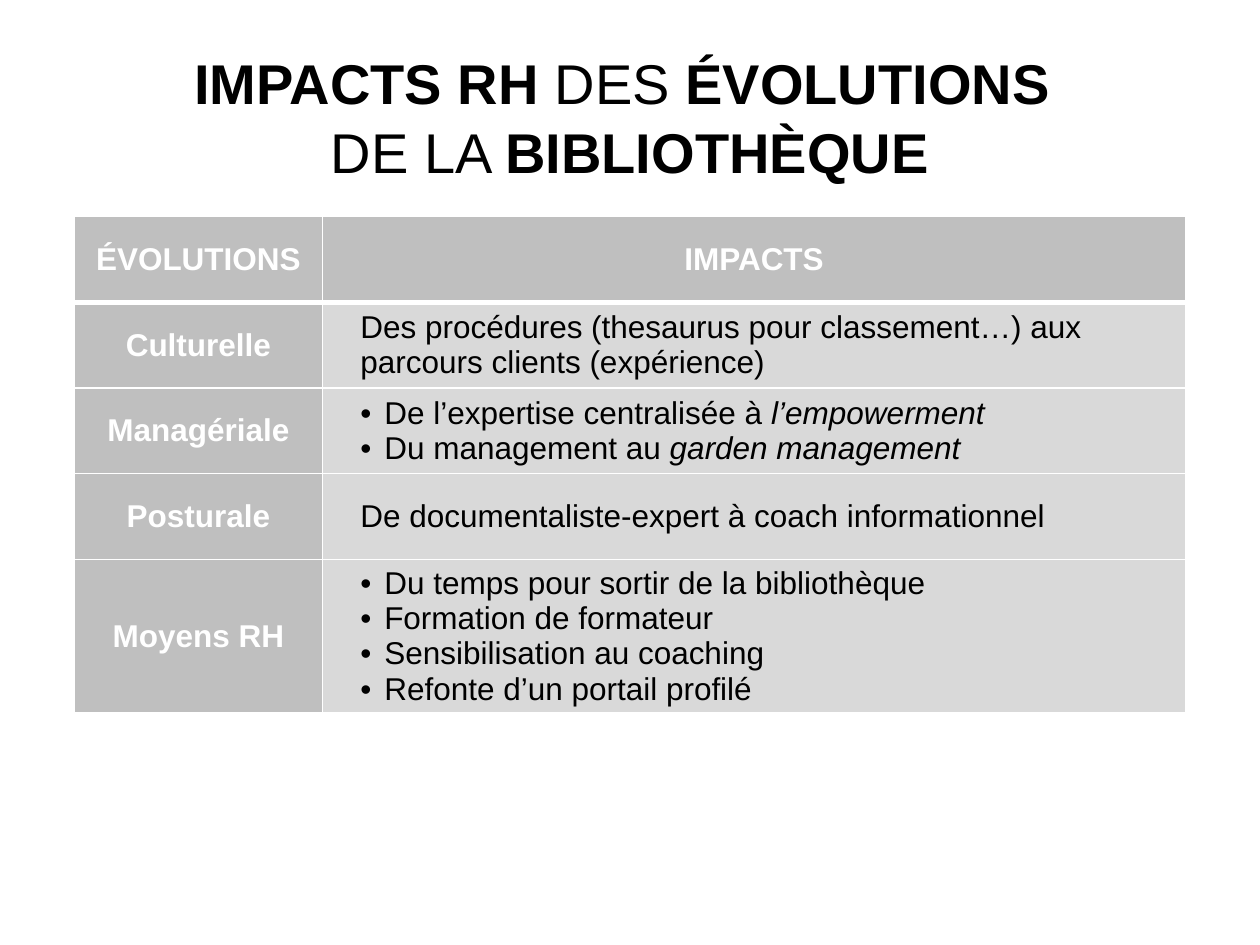
import pptx
import pptx.dml.color
import pptx.enum.text
import pptx.oxml
import pptx.oxml.ns
import pptx.util

Inches, Pt = pptx.util.Inches, pptx.util.Pt
ALIGN = pptx.enum.text.PP_ALIGN
MIDDLE = pptx.enum.text.MSO_ANCHOR.MIDDLE
COLORS = {"label": "BFBFBF", "body": "D9D9D9", "light": "FFFFFF", "dark": "000000"}
INDENT, HANGING = 0.2, 0.19
COLUMNS = (1.97, 6.85)
ROW_HEIGHT = 0.68

TITLE = ("*IMPACTS RH *DES* ÉVOLUTIONS *", "DE LA *BIBLIOTHÈQUE*")
ROWS = (
    ("ÉVOLUTIONS", ["IMPACTS"]),
    ("Culturelle", ["Des procédures (thesaurus pour classement…) aux parcours clients (expérience)"]),
    ("Managériale", ["De l’expertise centralisée à *l’empowerment*",
                     "Du management au *garden management*"]),
    ("Posturale", ["De documentaliste-expert à coach informationnel"]),
    ("Moyens RH", ["Du temps pour sortir de la bibliothèque", "Formation de formateur",
                   "Sensibilisation au coaching", "Refonte d’un portail profilé"]),
)


def write_spans(para, text, size, color, bold, emphasis):
    """Write text, setting the emphasis attribute on parts between asterisks."""
    for index, part in enumerate(text.split("*")):
        if not part:
            continue
        span = para.add_run()
        span.text = part
        span.font.name, span.font.size, span.font.bold = "Arial", Pt(size), bold
        span.font.color.rgb = pptx.dml.color.RGBColor.from_string(COLORS[color])
        if index % 2:
            setattr(span.font, emphasis, True)


def add_border(cell, side, width):
    line = pptx.oxml.parse_xml(
        f'<a:ln{side} {pptx.oxml.ns.nsdecls("a")} w="{Pt(width)}"><a:solidFill>'
        f'<a:srgbClr val="{COLORS["light"]}"/></a:solidFill></a:ln{side}>')
    cell._tc.get_or_add_tcPr().append(line)


deck = pptx.Presentation()
deck.slide_width, deck.slide_height = Inches(10), Inches(7.5)
page = deck.slides.add_slide(deck.slide_layouts[6])

table = page.shapes.add_table(
    len(ROWS), len(COLUMNS), Inches(0.59), Inches(1.72),
    Inches(sum(COLUMNS)), Inches(ROW_HEIGHT * len(ROWS))).table
for column, width in zip(table.columns, COLUMNS):
    column.width = Inches(width)

for row, (label, impacts) in enumerate(ROWS):
    table.rows[row].height = Inches(ROW_HEIGHT)
    for column, lines in enumerate(([label], impacts)):
        cell = table.cell(row, column)
        heading = row == 0 or column == 0
        cell.vertical_anchor = MIDDLE
        borders = {"L": 1, "R": 1, "T": 3 if row == 1 else 1, "B": 3 if row == 0 else 1}
        for side, width in borders.items():
            add_border(cell, side, width)
        cell.fill.solid()
        cell.fill.fore_color.rgb = pptx.dml.color.RGBColor.from_string(
            COLORS["label" if heading else "body"])
        for index, line in enumerate(lines):
            frame = cell.text_frame
            para = frame.add_paragraph() if index else frame.paragraphs[0]
            if heading:
                para.alignment = ALIGN.CENTER
            else:
                bulleted = len(lines) > 1
                hanging = HANGING if bulleted else 0
                properties = para._p.get_or_add_pPr()
                properties.set("marL", str(Inches(INDENT + hanging)))
                properties.set("indent", str(Inches(-hanging)))
                if bulleted:
                    for tag in ('buFont typeface="Arial"', 'buChar char="•"'):
                        properties.append(pptx.oxml.parse_xml(
                            f'<a:{tag} {pptx.oxml.ns.nsdecls("a")}/>'))
            write_spans(para, line, 18, "light" if heading else "dark", heading, "italic")

box = page.shapes.add_textbox(0, Inches(0.3), deck.slide_width, Inches(1.25))
box.text_frame.word_wrap = True
box.text_frame.vertical_anchor = MIDDLE
for index, line in enumerate(TITLE):
    para = box.text_frame.add_paragraph() if index else box.text_frame.paragraphs[0]
    para.alignment = ALIGN.CENTER
    if index:
        para.space_before = Pt(1.5)
    write_spans(para, line, 32, "dark", False, "bold")

deck.save("out.pptx")
